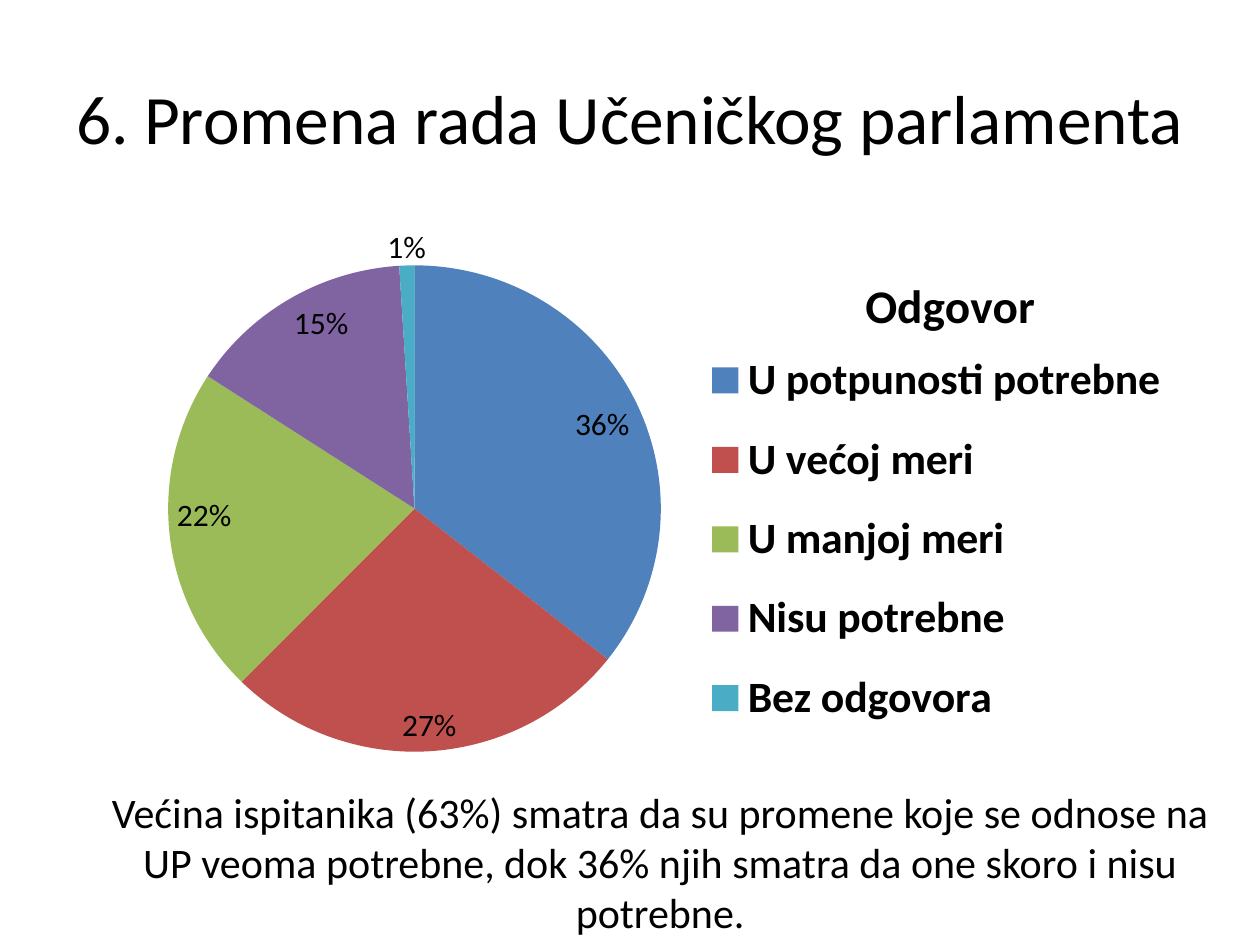
from lxml import etree
from pptx import Presentation
from pptx.chart.data import CategoryChartData
from pptx.dml.color import RGBColor
from pptx.enum.chart import XL_CHART_TYPE, XL_LABEL_POSITION, XL_LEGEND_POSITION
from pptx.enum.text import MSO_ANCHOR, PP_ALIGN
from pptx.oxml.ns import qn
from pptx.util import Inches, Pt

FONT = "Calibri"
BLACK = RGBColor(0x00, 0x00, 0x00)
ANSWERS = [
    ("U potpunosti potrebne", 36, RGBColor(0x4F, 0x81, 0xBD)),
    ("U većoj meri", 27, RGBColor(0xC0, 0x50, 0x4D)),
    ("U manjoj meri", 22, RGBColor(0x9B, 0xBB, 0x59)),
    ("Nisu potrebne", 15, RGBColor(0x80, 0x64, 0xA2)),
    ("Bez odgovora", 1, RGBColor(0x4B, 0xAC, 0xC6)),
]
TITLE_BOX = (0.5, 0.3, 9, 1.25)
CHART_BOX = (0.5, 1.75, 9, 4.95)
SUMMARY_BOX = (0.75, 6.19, 8.98, 1.31)


def set_font(font, size, bold=False):
    font.name = FONT
    font.size = Pt(size)
    font.bold = bold
    font.color.rgb = BLACK


def set_layout(parent, before, x, y, w=None, h=None, inner=False):
    """Place a chart part by shares of the chart's size."""
    for old in parent.findall(qn("c:layout")):
        parent.remove(old)
    layout = etree.Element(qn("c:layout"))
    manual = etree.SubElement(layout, qn("c:manualLayout"))
    settings = [("layoutTarget", "inner")] if inner else []
    settings += [("xMode", "edge"), ("yMode", "edge"), ("x", x), ("y", y)]
    if w is not None:
        settings += [("w", w), ("h", h)]
    for tag, value in settings:
        etree.SubElement(manual, qn(f"c:{tag}")).set("val", str(value))
    parent.find(qn(f"c:{before}")).addprevious(layout)


def fill_text(shape, text, size):
    tf = shape.text_frame
    tf.word_wrap = True
    tf.text = text
    p = tf.paragraphs[0]
    p.alignment = PP_ALIGN.CENTER
    set_font(p.font, size)
    return tf


def add_title(slide, box):
    title = slide.shapes.title
    title.left, title.top, title.width, title.height = map(Inches, box)
    tf = fill_text(title, "6. Promena rada Učeničkog parlamenta", 39.6)
    tf.vertical_anchor = MSO_ANCHOR.MIDDLE


def label_slices(plot):
    """Put percentages inside the slices, and the thin last one outside."""
    plot.has_data_labels = True
    labels = plot.data_labels
    labels.show_percentage = True
    labels.show_value = False
    labels.position = XL_LABEL_POSITION.INSIDE_END
    set_font(labels.font, 18)

    series = plot.series[0]
    last = series.points[len(ANSWERS) - 1].data_label
    set_font(last.font, 18)
    last.position = XL_LABEL_POSITION.OUTSIDE_END
    series_labels = series.data_labels
    series_labels.show_percentage = True
    series_labels.show_value = False
    series_labels.position = XL_LABEL_POSITION.INSIDE_END
    set_font(series_labels.font, 18)
    for tag, shown in (("showVal", "0"), ("showPercent", "1")):
        for element in series_labels._element.iter(qn(f"c:{tag}")):
            element.set("val", shown)


def add_answer_chart(slide, box):
    data = CategoryChartData()
    data.categories = [name for name, _, _ in ANSWERS]
    data.add_series("Odgovor", [value for _, value, _ in ANSWERS])
    chart = slide.shapes.add_chart(
        XL_CHART_TYPE.PIE, *map(Inches, box), data).chart
    set_font(chart.font, 18)

    chart.has_title = True
    tf = chart.chart_title.text_frame
    tf.text = "Odgovor"
    set_font(tf.paragraphs[0].font, 27, bold=True)
    chart.chart_title.include_in_layout = False
    set_layout(chart.chart_title._element, "overlay", 0.7, 0.06)

    chart.has_legend = True
    legend = chart.legend
    legend.position = XL_LEGEND_POSITION.TOP
    legend.include_in_layout = False
    set_font(legend.font, 25, bold=True)
    set_layout(legend._element, "overlay", 0.56, 0.16, 0.42, 0.69)

    plot = chart.plots[0]
    plot.vary_by_categories = True
    for i, (_, _, color) in enumerate(ANSWERS):
        fill = plot.series[0].points[i].format.fill
        fill.solid()
        fill.fore_color.rgb = color
    label_slices(plot)
    plot_area = chart._chartSpace.chart.plotArea
    set_layout(plot_area, "pieChart", 0.09, 0.06, 0.44, 0.79, inner=True)


def add_summary(slide, box):
    sp = slide.shapes.add_textbox(*map(Inches, box))
    fill_text(sp, "Većina ispitanika (63%) smatra da su promene koje se odnose "
                  "na UP veoma potrebne, dok 36% njih smatra da one skoro i "
                  "nisu potrebne.", 24)


def main():
    prs = Presentation()
    prs.slide_width, prs.slide_height = Inches(10), Inches(7.5)
    slide = prs.slides.add_slide(prs.slide_layouts.get_by_name("Title Only"))
    add_title(slide, TITLE_BOX)
    add_answer_chart(slide, CHART_BOX)
    add_summary(slide, SUMMARY_BOX)
    prs.save("out.pptx")


if __name__ == "__main__":
    main()
